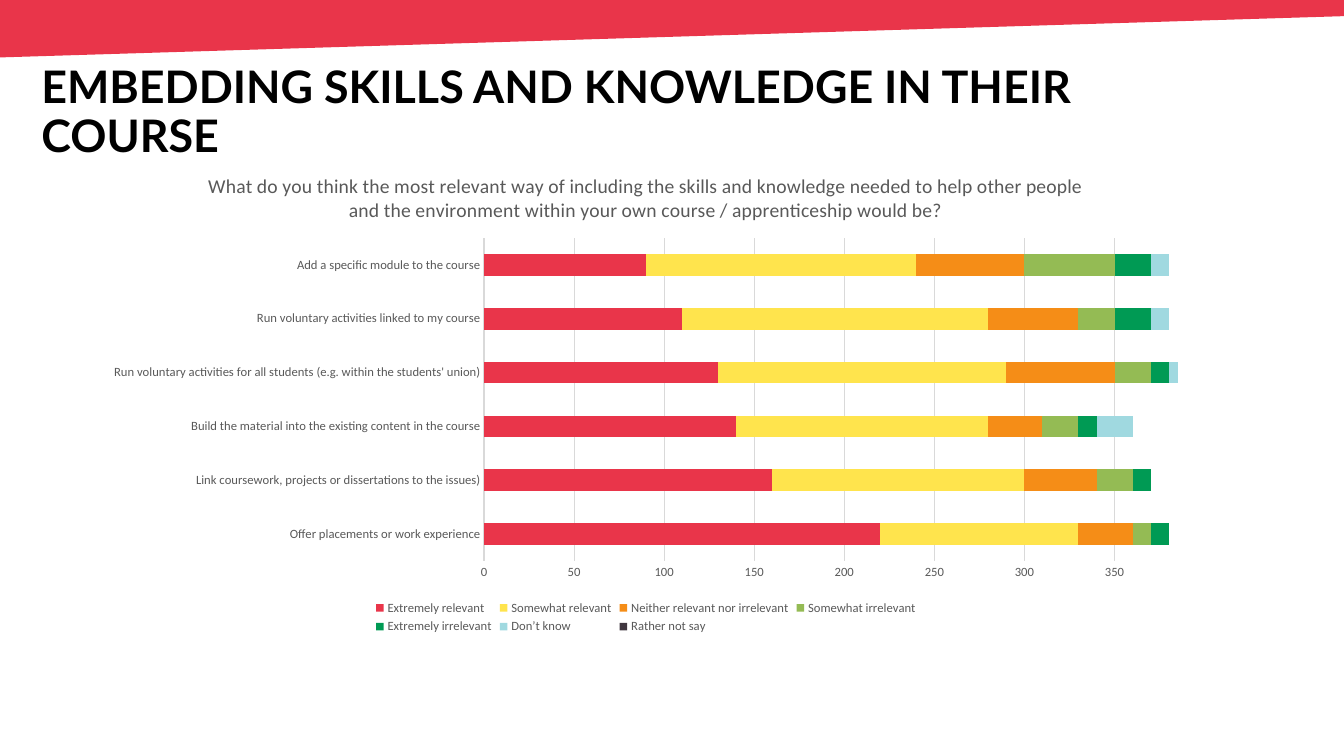
import dataclasses
import pptx
import pptx.chart.data
import pptx.dml.color
import pptx.enum.chart
import pptx.enum.text
import pptx.util
from lxml import etree

Inches = pptx.util.Inches
Pt = pptx.util.Pt
rgb = pptx.dml.color.RGBColor.from_string


@dataclasses.dataclass(frozen=True)
class Theme:
    """Colours, fonts and type sizes of the slide."""
    red: str = "E9354A"
    ink: str = "000000"
    grey: str = "595959"
    rule: str = "D9D9D9"
    head: str = "Lato"
    body: str = "Calibri"
    title: int = 32
    ask: int = 14
    label: int = 9


THEME = Theme()
TITLE = "EMBEDDING SKILLS AND KNOWLEDGE IN THEIR COURSE"
ASK = ("What do you think the most relevant way of including the skills and "
       "knowledge needed to help other people and the environment within your "
       "own course / apprenticeship would be?")
WAYS = [
    "Offer placements or work experience",
    "Link coursework, projects or dissertations to the issues)",
    "Build the material into the existing content in the course",
    "Run voluntary activities for all students (e.g. within the students' union)",
    "Run voluntary activities linked to my course",
    "Add a specific module to the course",
]
VOTES = [
    ("Extremely relevant", "E9354A", (220, 160, 140, 130, 110, 90)),
    ("Somewhat relevant", "FFE44D", (110, 140, 140, 160, 170, 150)),
    ("Neither relevant nor irrelevant", "F58D17", (30, 40, 30, 60, 50, 60)),
    ("Somewhat irrelevant", "94BB54", (10, 20, 20, 20, 20, 50)),
    ("Extremely irrelevant", "009A54", (10, 10, 10, 10, 20, 20)),
    ("Don’t know", "A0D9E0", (0, 0, 20, 10, 10, 10)),
    ("Rather not say", "40373F", (0, 0, 0, 0, 0, 0)),
]


def style(font, name, size, color, bold=False):
    """Set the face, size, colour and weight of a font."""
    font.name, font.size, font.bold = name, Pt(size), bold
    font.color.rgb = rgb(color)


def add_band(slide, x, y, w, h):
    """Draw the slanted band across the top."""
    pen = slide.shapes.build_freeform(Inches(x), Inches(y))
    points = [(x + 0.01, y + h), (x + w, y + 0.16), (x + w - 0.02, y)]
    pen.add_line_segments([(Inches(a), Inches(b)) for a, b in points])
    band = pen.convert_to_shape()
    band.shadow.inherit = False
    band.fill.solid()
    band.fill.fore_color.rgb = rgb(THEME.red)
    band.line.fill.background()


def add_title(slide, x, y, w, h):
    """Place and format the title placeholder."""
    title = slide.shapes.title
    title.left, title.top = Inches(x), Inches(y)
    title.width, title.height = Inches(w), Inches(h)
    frame = title.text_frame
    frame.text = TITLE
    frame.word_wrap = True
    frame.auto_size = pptx.enum.text.MSO_AUTO_SIZE.NONE
    frame.vertical_anchor = pptx.enum.text.MSO_ANCHOR.MIDDLE
    para = frame.paragraphs[0]
    para.alignment = pptx.enum.text.PP_ALIGN.LEFT
    para.line_spacing = 0.9
    style(para.font, THEME.head, THEME.title, THEME.ink, True)


def set_axes(chart):
    """Format both axes and the grid."""
    for axis in (chart.category_axis, chart.value_axis):
        axis.major_tick_mark = pptx.enum.chart.XL_TICK_MARK.NONE
        axis.minor_tick_mark = pptx.enum.chart.XL_TICK_MARK.NONE
        style(axis.tick_labels.font, THEME.body, THEME.label, THEME.grey)
    scale = chart.value_axis
    scale.minimum_scale, scale.maximum_scale, scale.major_unit = 0, 385, 50
    scale.format.line.fill.background()
    scale.has_major_gridlines = True
    for part in (chart.category_axis, scale.major_gridlines):
        part.format.line.color.rgb = rgb(THEME.rule)
        part.format.line.width = Pt(0.75)


def set_plot(chart, x, y, w, h):
    """Fix the inner plot box, given in shares of the chart."""
    area = chart.plots[0]._element.getparent()
    tag = "{%s}" % area.nsmap["c"]
    for old in area.findall(tag + "layout"):
        area.remove(old)
    layout = etree.Element(tag + "layout")
    area.insert(0, layout)
    manual = etree.SubElement(layout, tag + "manualLayout")
    rules = [("layoutTarget", "inner"), ("xMode", "edge"), ("yMode", "edge"),
             ("x", x), ("y", y), ("w", w), ("h", h)]
    for name, val in rules:
        etree.SubElement(manual, tag + name, val=str(val))


def add_votes(slide, x, y, w, h):
    """Add the stacked bar chart of answers."""
    data = pptx.chart.data.CategoryChartData()
    data.categories = WAYS
    for name, _, vals in VOTES:
        data.add_series(name, vals)
    kind = pptx.enum.chart.XL_CHART_TYPE.BAR_STACKED
    box = [Inches(n) for n in (x, y, w, h)]
    chart = slide.shapes.add_chart(kind, *box, data).chart
    style(chart.font, THEME.body, THEME.label, THEME.grey)
    chart.has_title = True
    frame = chart.chart_title.text_frame
    frame.text = ASK
    style(frame.paragraphs[0].font, THEME.body, THEME.ask, THEME.grey)
    chart.chart_title.include_in_layout = False
    chart.has_legend = True
    chart.legend.position = pptx.enum.chart.XL_LEGEND_POSITION.BOTTOM
    chart.legend.include_in_layout = False
    style(chart.legend.font, THEME.body, THEME.label, THEME.grey)
    plot = chart.plots[0]
    plot.gap_width, plot.overlap, plot.vary_by_categories = 150, 100, False
    for series, (_, color, _) in zip(plot.series, VOTES):
        series.format.fill.solid()
        series.format.fill.fore_color.rgb = rgb(color)
    set_axes(chart)
    set_plot(chart, 0.354, 0.175, 0.626, 0.666)


def main():
    """Build and save the slide."""
    deck = pptx.Presentation()
    deck.slide_width, deck.slide_height = Inches(13.33), Inches(7.5)
    slide = deck.slides.add_slide(deck.slide_layouts.get_by_name("Title Only"))
    add_band(slide, -0.01, 0, 13.36, 0.57)
    add_title(slide, 0.31, 0.58, 11.7, 1.09)
    add_votes(slide, 0.91, 1.52, 10.99, 4.81)
    deck.save("out.pptx")


if __name__ == "__main__":
    main()
